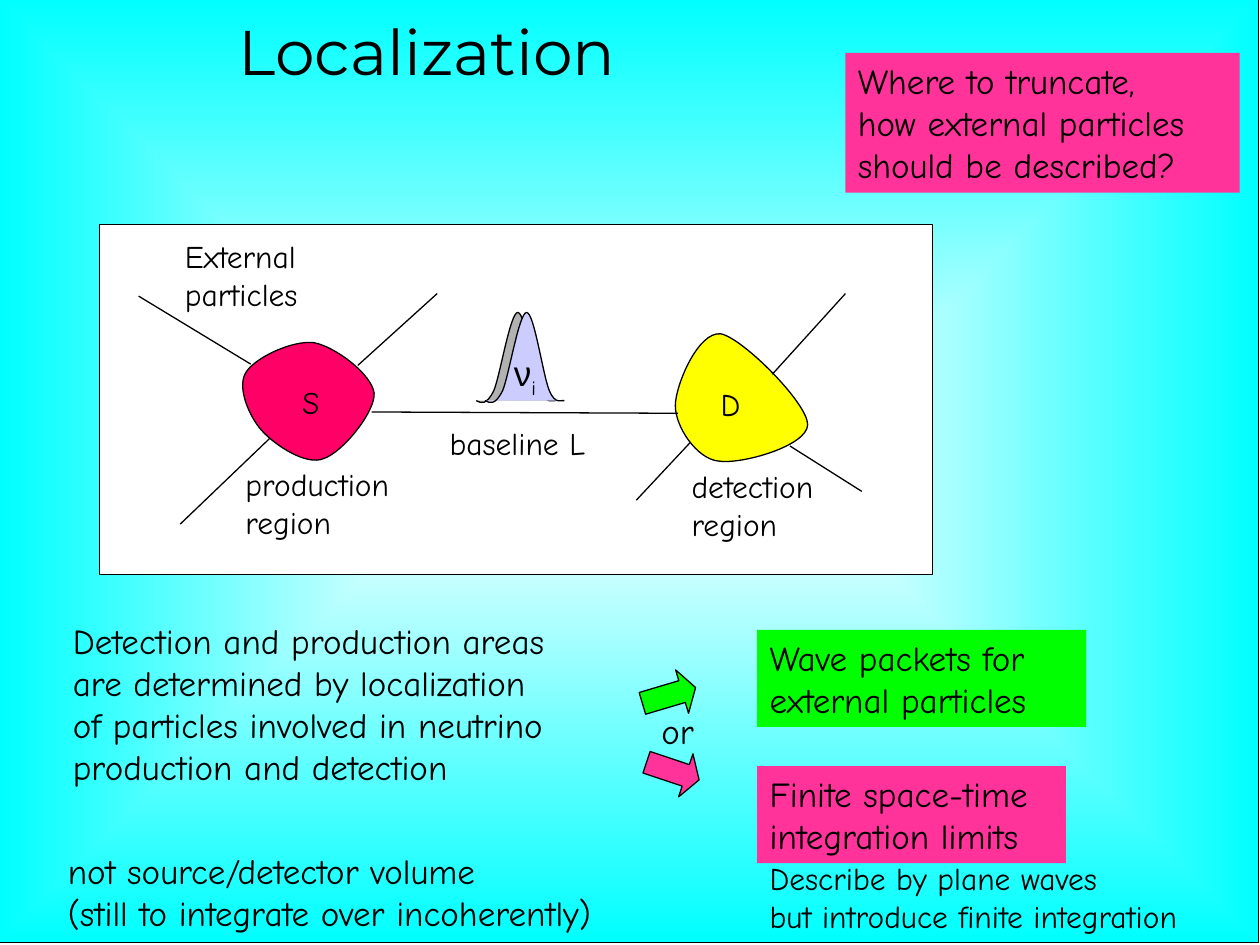
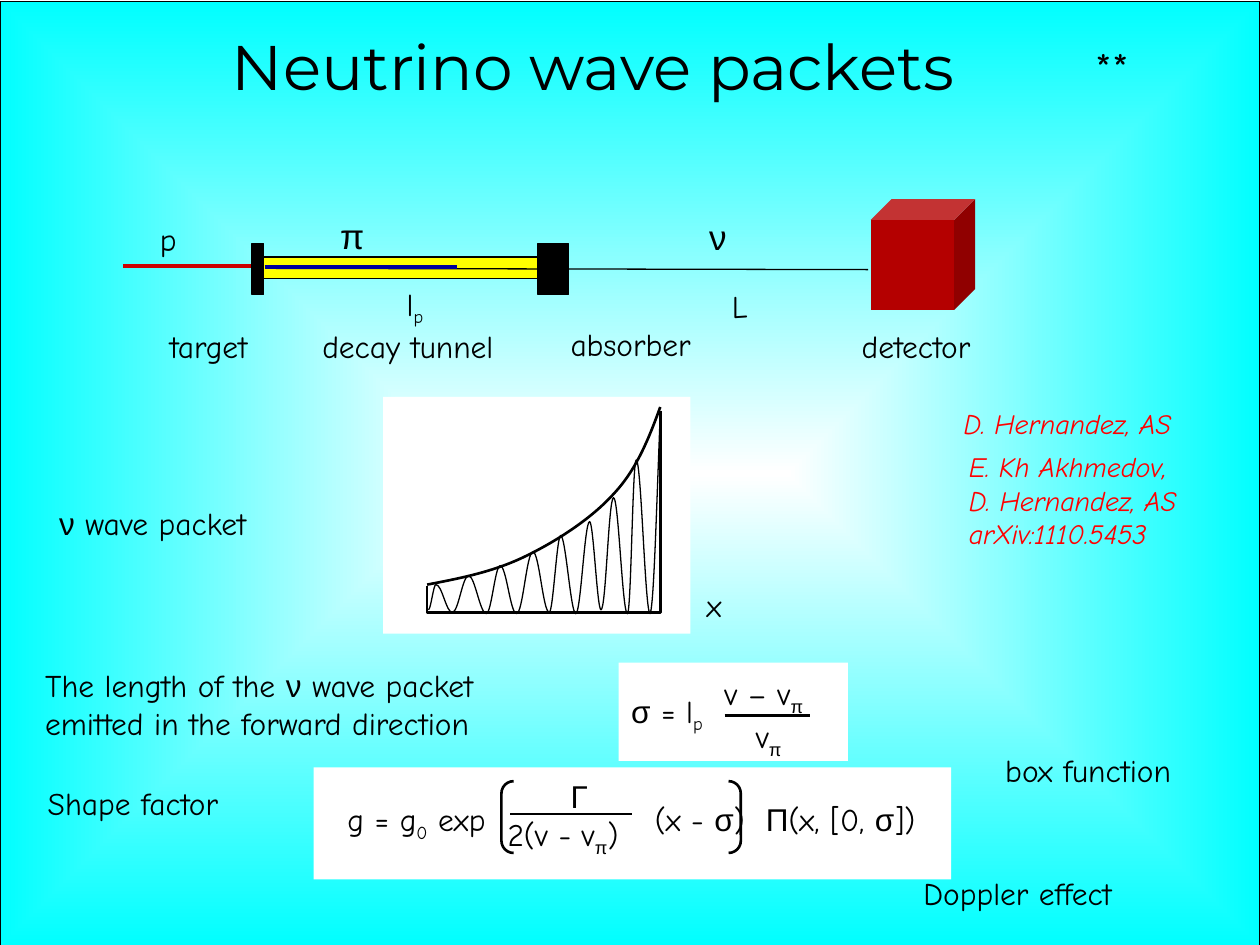
from dataclasses import dataclass
from itertools import groupby

from lxml import etree
from pptx import Presentation
from pptx.dml.color import RGBColor
from pptx.enum.shapes import MSO_CONNECTOR, MSO_SHAPE
from pptx.enum.text import MSO_ANCHOR, PP_ALIGN
from pptx.oxml.ns import qn
from pptx.util import Emu, Pt

PX = 9144
RECT = MSO_SHAPE.RECTANGLE
CUBE = MSO_SHAPE.CUBE
ARROW = MSO_SHAPE.RIGHT_ARROW
BRACKETS = MSO_SHAPE.DOUBLE_BRACKET
STRAIGHT = MSO_CONNECTOR.STRAIGHT
TOP = MSO_ANCHOR.TOP
LEFT, CENTER = PP_ALIGN.LEFT, PP_ALIGN.CENTER


@dataclass(frozen=True)
class Theme:
    ink: str = "000000"
    paper: str = "FFFFFF"
    edge: str = "00FFFF"
    pink: str = "FF3399"
    green: str = "00FF00"
    yellow: str = "FFFF00"
    source: str = "FF0066"
    packet: str = "CCCCFF"
    packet_shade: str = "B2B2B2"
    citation: str = "FF0000"
    proton: str = "CC0000"
    pion: str = "000099"
    detector: str = "B40000"
    title_font: str = "Montserrat"
    body_font: str = "Comic Neue"
    greek_font: str = "Arial"
    title_size: int = 36
    mark_size: int = 24
    note_size: int = 20
    label_size: int = 18
    citation_size: int = 16
    thin: float = 0.75
    medium: float = 1.5
    thick: float = 2.25


@dataclass(frozen=True)
class Line:
    text: str
    indent: int = 0
    tabs: tuple = ()


THEME = Theme()


def px(value):
    return Emu(round(value * PX))


def is_greek(letter):
    return "Α" <= letter <= "ω"


def write(frame, *lines, size=THEME.label_size, font=THEME.body_font,
          color=THEME.ink, italic=False, align=LEFT):
    frame.word_wrap = True
    frame.vertical_anchor = TOP
    for index, line in enumerate(lines):
        if isinstance(line, str):
            line = Line(line)
        paragraph = frame.add_paragraph() if index else frame.paragraphs[0]
        paragraph.alignment = align
        properties = paragraph._p.get_or_add_pPr()
        if line.indent:
            properties.set("marL", str(px(line.indent)))
            properties.set("indent", "0")
        if line.tabs:
            stops = etree.SubElement(properties, qn("a:tabLst"))
            for stop in line.tabs:
                etree.SubElement(stops, qn("a:tab"), pos=str(px(stop)), algn="l")
        letters = [(letter, is_greek(letter), before == "_")
                   for before, letter in zip(" " + line.text, line.text) if letter != "_"]
        for (greek, lowered), group in groupby(letters, key=lambda item: item[1:]):
            run = paragraph.add_run()
            run.text = "".join(item[0] for item in group)
            run.font.size = Pt(size)
            run.font.name = THEME.greek_font if greek else font
            run.font.italic = italic
            run.font.color.rgb = RGBColor.from_string(color)
            if lowered:
                run._r.get_or_add_rPr().set("baseline", "-25000")


def wave(extremes):
    points = [extremes[0]]
    for (x0, y0), (x1, y1) in zip(extremes, extremes[1:]):
        pull = round((x1 - x0) * 0.36)
        points += [(x0 + pull, y0), (x1 - pull, y1), (x1, y1)]
    return points


class Deck:
    def __init__(self, theme):
        self.theme = theme
        self.presentation = Presentation()
        self.presentation.slide_width = px(1000)
        self.presentation.slide_height = px(750)

    def page(self, title, title_box, backdrop_at):
        layout = self.presentation.slide_layouts[5]
        self.slide = self.presentation.slides.add_slide(layout)
        self.shapes = self.slide.shapes
        self.backdrop(*backdrop_at)
        heading = self.shapes.title
        heading.left, heading.top, heading.width, heading.height = map(px, title_box)
        write(heading.text_frame, title, size=self.theme.title_size,
              font=self.theme.title_font, align=CENTER)

    def backdrop(self, x, y):
        glow = self.shape(RECT, (x, y, 1000, 750), line=self.theme.ink)
        glow.fill.gradient()
        for stop, position, color in zip(glow.fill.gradient_stops, (0, 1),
                                         (self.theme.paper, self.theme.edge)):
            stop.position = position
            stop.color.rgb = RGBColor.from_string(color)
        gradient = glow._element.spPr.find(qn("a:gradFill"))
        gradient.remove(gradient.find(qn("a:lin")))
        center = etree.SubElement(gradient, qn("a:path"), path="shape")
        etree.SubElement(center, qn("a:fillToRect"), l="50000", t="50000", r="50000", b="50000")
        self.shapes._spTree.insert(2, glow._element)

    def paint(self, shape, fill, line, width):
        shape.shadow.inherit = False
        if fill:
            shape.fill.solid()
            shape.fill.fore_color.rgb = RGBColor.from_string(fill)
        else:
            shape.fill.background()
        if line:
            shape.line.color.rgb = RGBColor.from_string(line)
            shape.line.width = Pt(width)
        else:
            shape.line.fill.background()
        return shape

    def shape(self, kind, box, fill=None, line=None, width=THEME.thin, turn=0, adjust=()):
        shape = self.shapes.add_shape(kind, *map(px, box))
        shape.rotation = turn
        for index, value in enumerate(adjust):
            shape.adjustments[index] = value
        return self.paint(shape, fill, line, width)

    def outline(self, points, fill=None, width=THEME.thin, close=False):
        corners = [(px(x), px(y)) for x, y in points]
        builder = self.shapes.build_freeform(*corners[0], scale=1.0)
        builder.add_line_segments(corners[1:], close=close)
        return self.paint(builder.convert_to_shape(), fill, self.theme.ink, width)

    def curve(self, points, **style):
        drawn = self.outline(points, **style)
        segments = list(drawn._element.iter(qn("a:lnTo")))
        for start in range(0, len(segments), 3):
            bend = etree.Element(qn("a:cubicBezTo"))
            segments[start].addprevious(bend)
            for segment in segments[start:start + 3]:
                bend.append(segment[0])
                segment.getparent().remove(segment)

    def line(self, x0, y0, x1, y1, color=THEME.ink, width=THEME.thin):
        connector = self.shapes.add_connector(STRAIGHT, *map(px, (x0, y0, x1, y1)))
        connector.line.color.rgb = RGBColor.from_string(color)
        connector.line.width = Pt(width)
        etree.SubElement(connector._element.spPr, qn("a:effectLst"))

    def text(self, box, *lines, **style):
        write(self.shapes.add_textbox(*map(px, box)).text_frame, *lines, **style)

    def note(self, box, fill, *lines):
        panel = self.shape(RECT, box, fill)
        write(panel.text_frame, *lines, size=self.theme.note_size)


def localization(deck):
    t = deck.theme
    deck.page("Localization", (46, 5, 586, 158), (-1, -2))
    deck.shape(RECT, (79, 178, 661, 278), t.paper, t.ink)
    production = [(208, 342), (198, 331), (188, 308), (195, 296), (202, 284), (232, 270),
                  (249, 272), (266, 275), (295, 297), (297, 312), (298, 327), (272, 359),
                  (257, 364), (243, 370), (218, 353), (208, 342)]
    detection = [(536, 322), (536, 306), (554, 263), (572, 265), (589, 268), (641, 320),
                 (641, 337), (641, 354), (588, 369), (570, 366), (553, 364), (536, 339),
                 (536, 322)]
    deck.curve(production, fill=t.source, close=True)
    deck.curve(detection, fill=t.yellow, close=True)

    for ends in ((295, 327, 538, 328), (110, 235, 199, 289), (284, 290, 347, 233),
                 (613, 297, 671, 233), (627, 354, 684, 390), (214, 348, 143, 416),
                 (505, 397, 548, 351)):
        deck.line(*ends)

    packet = [(378, 318), (382, 320), (386, 322), (392, 310), (397, 298), (405, 248),
              (411, 248), (417, 248), (424, 298), (429, 310), (434, 322), (439, 317),
              (441, 318)]
    for shift, fill in ((0, t.packet_shade), (7, t.packet)):
        deck.curve([(x + shift, y) for x, y in packet], fill=fill)

    for box, *lines in (((185, 364, 144, 70), "production", "region"),
                        ((539, 366, 132, 70), "detection", "region"),
                        ((347, 332, 135, 40), "baseline L"),
                        ((137, 183, 123, 70), "External", "particles"),
                        ((230, 299, 38, 40), "S"),
                        ((562, 301, 38, 40), "D"),
                        ((601, 677, 389, 71), "Describe by plane waves",
                         "but introduce finite integration")):
        deck.text(box, *lines)

    for box, *lines in (((48, 487, 442, 145), "Detection and production areas",
                         "are determined by localization",
                         "of particles involved in neutrino", "production and detection"),
                        ((44, 669, 495, 77), "not source/detector volume",
                         "(still to integrate over incoherently)"),
                        ((398, 274, 40, 43), "ν_i"),
                        ((515, 558, 65, 44), "or")):
        deck.text(box, *lines, size=t.note_size)

    deck.note((671, 42, 313, 111), t.pink, "Where to truncate,",
              "how external particles", "should be described?")
    deck.note((601, 500, 261, 77), t.green, "Wave packets for", "external particles")
    deck.note((601, 608, 245, 77), t.pink, "Finite space-time", "integration limits")
    for x, y, turn, fill in ((512, 594, 18.5, t.pink), (509, 534, 343.4, t.green)):
        deck.shape(ARROW, (x, y, 44, 36), fill, t.ink, turn=turn, adjust=(0.5, 0.31))


def wave_packets(deck):
    t = deck.theme
    deck.page("Neutrino wave packets", (84, 17, 773, 130), (0, 1))
    for panel in ((249, 609, 506, 89), (491, 526, 182, 78), (304, 315, 244, 188)):
        deck.shape(RECT, panel, t.paper)

    deck.shape(RECT, (209, 204, 218, 17), t.yellow, t.ink)
    deck.line(219, 213, 689, 214)
    deck.line(210, 212, 363, 212, t.pion, t.thick)
    deck.line(200, 211, 98, 211, t.proton, t.thick)
    for block in ((200, 193, 9, 41), (427, 193, 24, 41)):
        deck.shape(RECT, block, t.ink, t.ink)
    deck.shape(CUBE, (691, 158, 83, 88), t.detector, adjust=(0.2,))

    envelope = [(524, 323), (515, 348), (505, 373), (487, 392), (469, 412), (441, 430),
                (416, 442), (391, 454), (365, 459), (339, 464)]
    deck.curve(envelope, width=t.medium)
    deck.outline([(524, 326), (524, 486), (339, 486), (339, 465)], width=t.medium)
    extremes = [(340, 484), (346, 464), (359, 486), (372, 457), (386, 487), (397, 449),
                (410, 487), (423, 438), (436, 486), (445, 425), (457, 487), (468, 414),
                (477, 484), (487, 395), (498, 487), (505, 365), (516, 487)]
    deck.curve(wave(extremes) + [(519, 481), (521, 405), (524, 329)])

    for box, *lines in (((571, 223, 34, 40), "L"),
                        ((313, 221, 43, 40), "l_p"),
                        ((551, 460, 35, 40), "x"),
                        ((117, 170, 34, 40), "p"),
                        ((125, 255, 95, 40), "target"),
                        ((246, 255, 166, 40), "decay tunnel"),
                        ((674, 255, 124, 40), "detector"),
                        ((443, 253, 126, 40), "absorber"),
                        ((491, 544, 85, 40), "σ = l_p"),
                        ((26, 524, 403, 70), "The length of the ν wave packet",
                         "emitted in the forward direction"),
                        ((266, 630, 484, 40),
                         Line("g = g_0 exp\t(x - σ)\tΠ(x, [0, σ])", tabs=(244, 332))),
                        ((28, 617, 175, 40), "Shape factor"),
                        ((393, 612, 113, 70), Line("Γ", indent=50), "2(v - v_π)"),
                        ((723, 689, 195, 40), "Doppler effect"),
                        ((565, 530, 87, 70), "v – v_π", Line("v_π", indent=25)),
                        ((788, 591, 167, 40), "box function"),
                        ((37, 395, 182, 40), "ν wave packet")):
        deck.text(box, *lines)
    for x, y, particle in ((260, 165, "π"), (553, 166, "ν")):
        deck.text((x, y, 35, 43), particle, size=t.note_size)
    deck.text((860, 28, 56, 50), "**", size=t.mark_size)
    for box, *lines in (((755, 318, 205, 37), "D. Hernandez, AS"),
                        ((759, 352, 211, 90), "E. Kh Akhmedov,", "D. Hernandez, AS",
                         "arXiv:1110.5453")):
        deck.text(box, *lines, size=t.citation_size, color=t.citation, italic=True)

    deck.line(405, 646, 502, 646, width=t.medium)
    deck.line(575, 568, 643, 568, width=t.medium)
    deck.shape(BRACKETS, (398, 620, 190, 57), line=t.ink, width=t.medium, adjust=(0.17,))


def main():
    deck = Deck(THEME)
    localization(deck)
    wave_packets(deck)
    deck.presentation.save("out.pptx")


if __name__ == "__main__":
    main()
